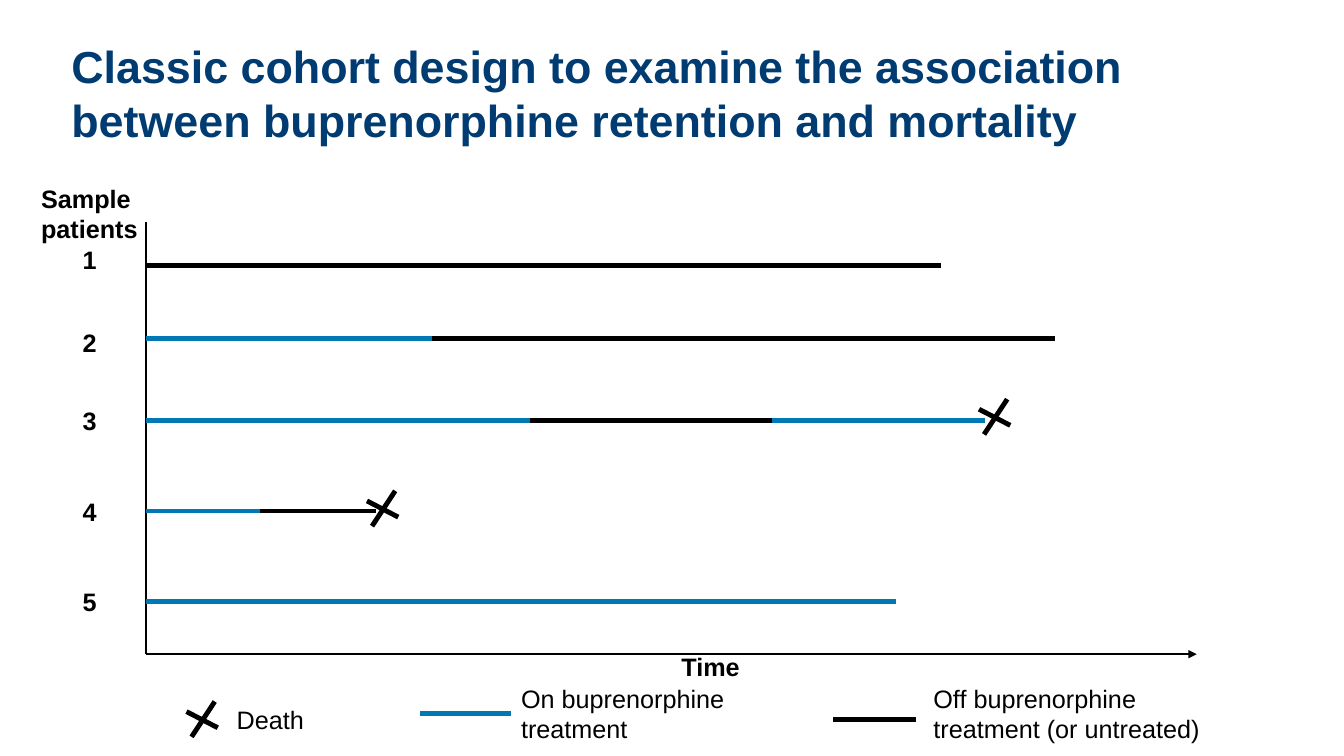
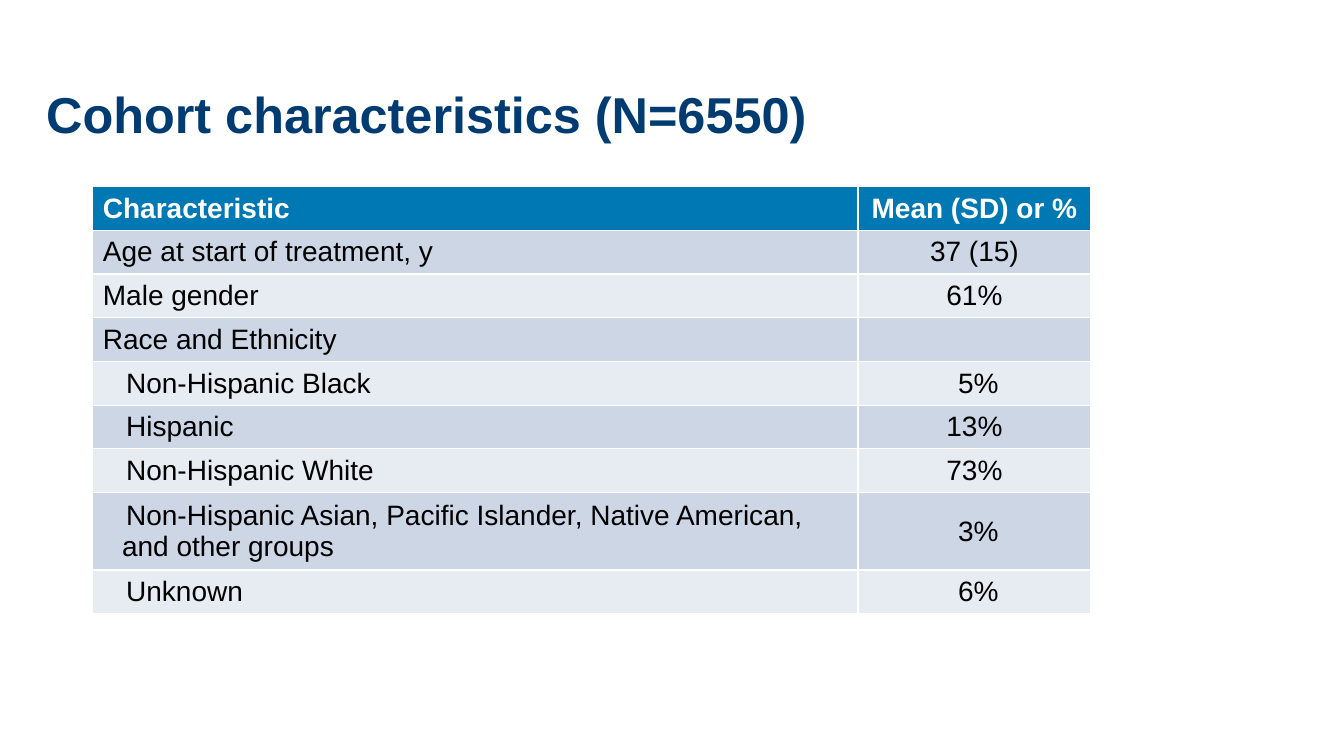
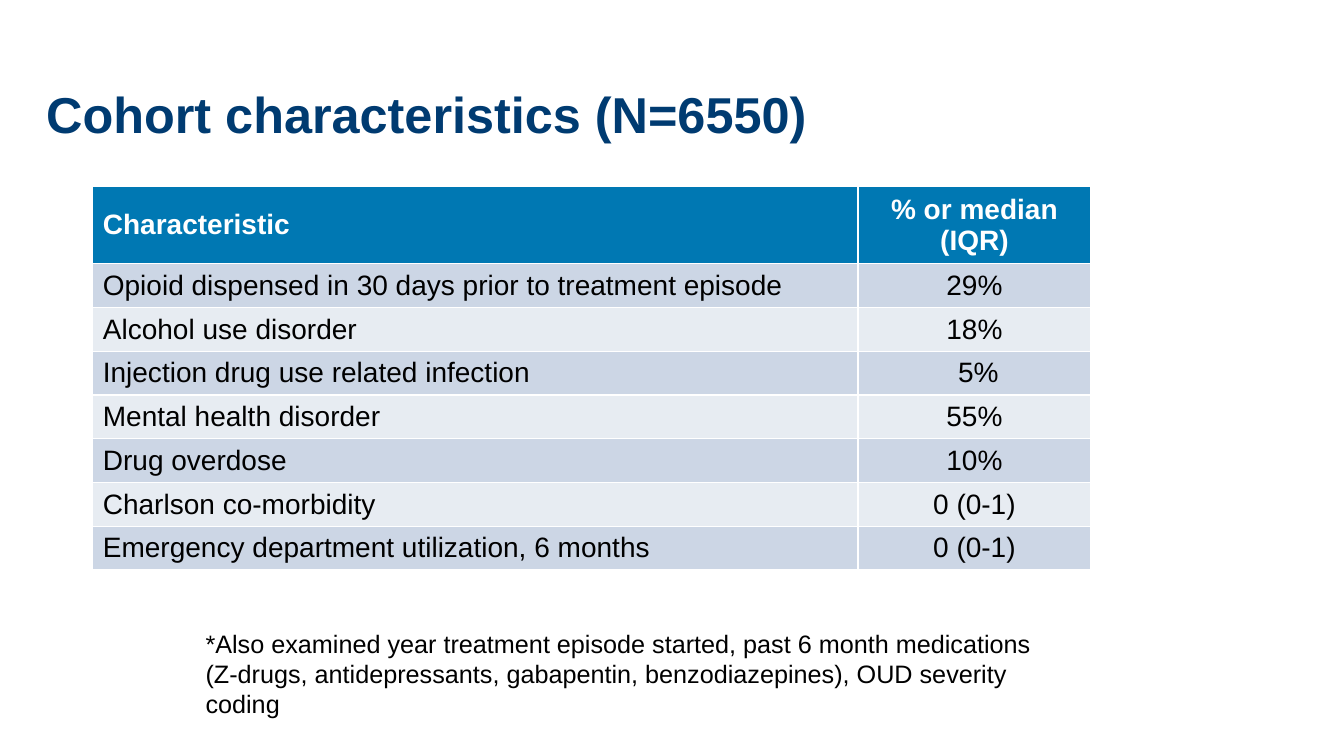
"""Build three slides on a buprenorphine cohort: a timeline and two tables."""
from lxml import etree
from pptx import Presentation
from pptx.dml.color import RGBColor
from pptx.enum.shapes import MSO_CONNECTOR
from pptx.enum.text import MSO_ANCHOR, PP_ALIGN
from pptx.oxml.ns import qn
from pptx.util import Inches, Pt

STRAIGHT = MSO_CONNECTOR.STRAIGHT
TOP, MIDDLE = MSO_ANCHOR.TOP, MSO_ANCHOR.MIDDLE
LEFT, CENTER = PP_ALIGN.LEFT, PP_ALIGN.CENTER
FONT = "Arial"
NAVY, BLUE, BLACK, WHITE = "003B71", "0078B3", "000000", "FFFFFF"
BANDS = ["E7ECF2", "CCD6E5"]

prs = Presentation()
prs.slide_width, prs.slide_height = Inches(13.33), Inches(7.5)
CELL = prs.slide_height / 75
BLANK = prs.slide_layouts[6]


def add_text(s, text, box, size=18, color=BLACK, bold=False, anchor=TOP):
    sp = s.shapes.add_textbox(*[round(v * CELL) for v in box])
    tf = sp.text_frame
    tf.word_wrap = True
    tf.vertical_anchor = anchor
    p = tf.paragraphs[0]
    p.text = text
    p.font.name, p.font.size, p.font.bold = FONT, Pt(size), bold
    p.font.color.rgb = RGBColor.from_string(color)


def add_line(s, x1, y1, x2, y2, color=BLACK, width=3.5):
    ends = [round(v * CELL) for v in (x1, y1, x2, y2)]
    sp = s.shapes.add_connector(STRAIGHT, *ends)
    sp.line.color.rgb = RGBColor.from_string(color)
    sp.line.width = Pt(width)
    etree.SubElement(sp._element.spPr, qn("a:effectLst"))
    return sp


s = prs.slides.add_slide(BLANK)
add_text(s, "Classic cohort design to examine the association between "
         "buprenorphine retention and mortality",
         (6.1, 1.9, 115, 14.5), 32, NAVY, True, MIDDLE)

AXIS_X, AXIS_Y = 14.5, 64.9
add_line(s, AXIS_X, 22, AXIS_X, AXIS_Y, width=1.5)
time_axis = add_line(s, AXIS_X, AXIS_Y, 118.7, AXIS_Y, width=1.5)
etree.SubElement(time_axis.line._get_or_add_ln(), qn("a:tailEnd"), type="triangle")
add_text(s, "Time", (66.6, 64.1, 9.2, 4), bold=True)
add_text(s, "Sample patients", (3.1, 17.7, 15.4, 7.1), bold=True)

patients = [
    (26.3, 23.7, [(93.3, BLACK)]),
    (33.6, 32, [(42.8, BLUE), (104.6, BLACK)]),
    (41.7, 39.7, [(52.6, BLUE), (76.6, BLACK), (97.7, BLUE)]),
    (50.7, 48.7, [(25.8, BLUE), (37.3, BLACK)]),
    (59.7, 57.7, [(88.9, BLUE)]),
]
for number, (y, label_y, periods) in enumerate(patients, 1):
    add_text(s, str(number), (7.2, label_y, 6.1, 4), bold=True)
    start = AXIS_X
    for end, color in periods:
        add_line(s, start, y, end, y, color)
        start = end

for x, y in [(97.1, 39.6), (36.4, 48.7), (18.5, 69.6)]:
    add_line(s, x, y + 1, x + 3.1, y + 2.6)
    add_line(s, x + 2.8, y, x + 0.5, y + 3.5)

add_line(s, 41.7, 70.8, 50.7, 70.8, BLUE)
add_line(s, 82.6, 71.4, 90.9, 71.4)
for text, box in [
    ("Death", (22.5, 69.4, 24.3, 4)),
    ("On buprenorphine treatment", (50.7, 67.3, 24.3, 7.1)),
    ("Off buprenorphine treatment (or untreated)", (91.6, 67.3, 31.7, 7.1)),
]:
    add_text(s, text, box)

demographics = [
    ("Characteristic", "Mean (SD) or %"),
    ("Age at start of treatment, y", "37 (15)"),
    ("Male gender", "61%"),
    ("Race and Ethnicity", ""),
    ("Non-Hispanic Black", " 5%"),
    ("Hispanic", "13%"),
    ("Non-Hispanic White", "73%"),
    ("Non-Hispanic Asian, Pacific Islander, Native American, and other groups", " 3%"),
    ("Unknown", " 6%"),
]
clinical = [
    ("Characteristic", "% or median (IQR)"),
    ("Opioid dispensed in 30 days prior to treatment episode", "29%"),
    ("Alcohol use disorder", "18%"),
    ("Injection drug use related infection", " 5%"),
    ("Mental health disorder", "55%"),
    ("Drug overdose", "10%"),
    ("Charlson co-morbidity", "0 (0-1)"),
    ("Emergency department utilization, 6 months", "0 (0-1)"),
]
ROW = 4.1
for rows, tall_row, subgroups in [(demographics, 7, range(4, 9)), (clinical, 0, ())]:
    s = prs.slides.add_slide(BLANK)
    add_text(s, "Cohort characteristics (N=6550)", (3.6, 4, 120.5, 14.5),
             36, NAVY, True, MIDDLE)
    box = (9.2, 18.5, 99, ROW * len(rows))
    table = s.shapes.add_table(len(rows), 2, *[round(v * CELL) for v in box]).table
    for column, width in zip(table.columns, (75.9, 23.1)):
        column.width = round(width * CELL)
    for i, row in enumerate(rows):
        table.rows[i].height = round((7.1 if i == tall_row else ROW) * CELL)
        for j, text in enumerate(row):
            cell = table.cell(i, j)
            cell.vertical_anchor = MIDDLE
            cell.fill.solid()
            cell.fill.fore_color.rgb = RGBColor.from_string(BANDS[i % 2] if i else BLUE)
            p = cell.text_frame.paragraphs[0]
            p.text = text
            p.alignment = CENTER if j else LEFT
            p.font.name, p.font.size, p.font.bold = FONT, Pt(20), i == 0
            p.font.color.rgb = RGBColor.from_string(BLACK if i else WHITE)
            if j == 0 and i in subgroups:
                pPr = p._p.get_or_add_pPr()
                pPr.set("marL", str(Inches(0.19)))
                pPr.set("indent", str(Inches(0.04)))

add_text(s, "*Also examined year treatment episode started, past 6 month medications "
         "(Z-drugs, antidepressants, gabapentin, benzodiazepines), OUD severity coding",
         (19.4, 61.8, 84.8, 7.1))

prs.save("out.pptx")
